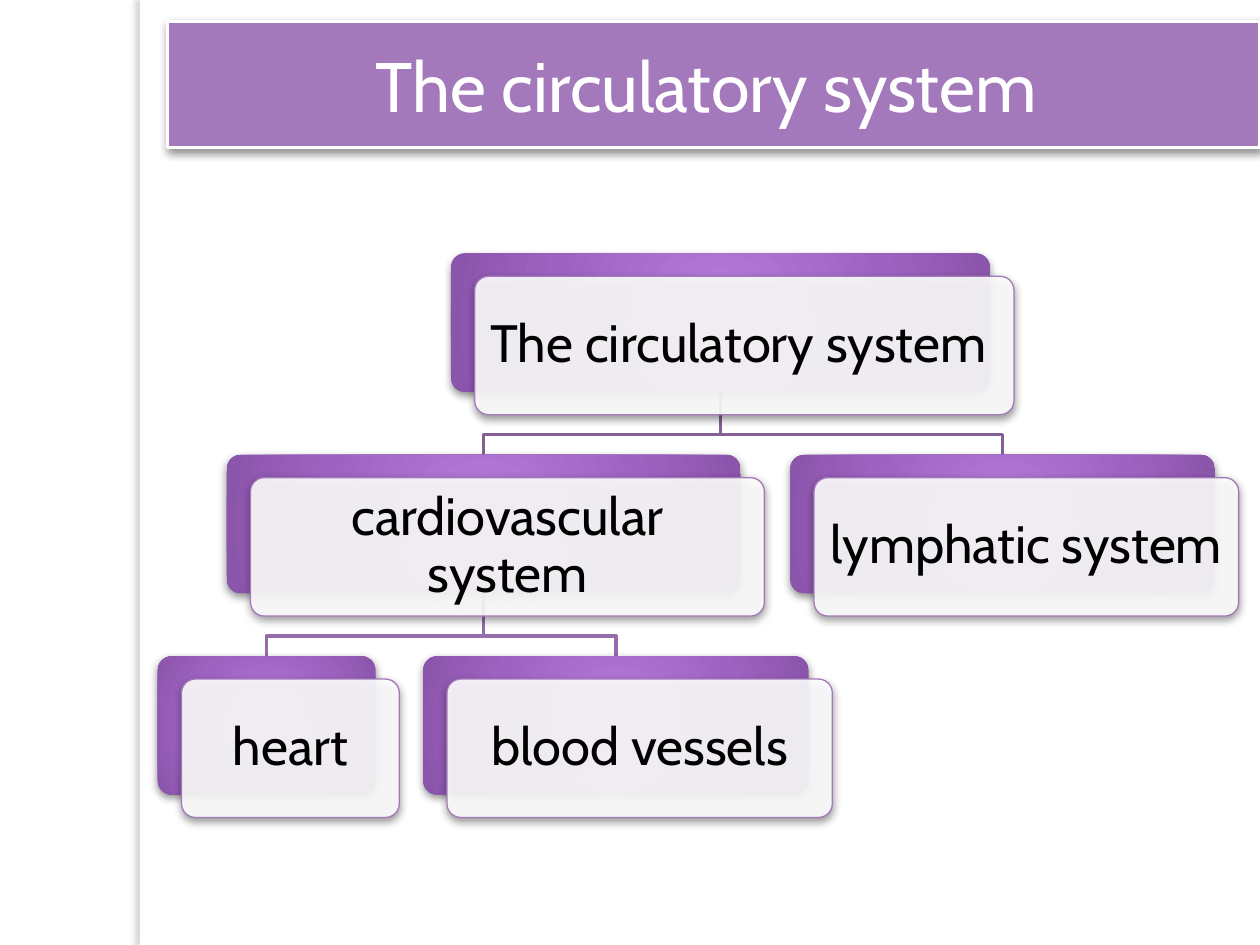
"""Build a slide with a hierarchy chart of the circulatory system."""
from dataclasses import dataclass

from pptx import Presentation
from pptx.dml.color import RGBColor as Color
from pptx.enum.shapes import MSO_SHAPE as Preset
from pptx.enum.text import MSO_ANCHOR as Anchor, MSO_AUTO_SIZE as AutoSize, PP_ALIGN as Align
from pptx.oxml import parse_xml
from pptx.oxml.ns import nsdecls
from pptx.util import Cm, Pt


@dataclass(frozen=True)
class Theme:
    font: str = "Cabin"
    title_size: int = 40
    node_size: int = 30
    white: str = "FFFFFF"
    text: str = "000000"
    accent: str = "A379BB"
    branches: tuple = ("836196", "946EAA")
    gradient: tuple = ((0, "B277D5"), (15, "B177D4"), (62, "9D63C0"), (97, "8C55AC"), (100, "8A50AB"))
    strip_shadow: tuple = ("646068", 25, 3, 3, 180)
    card_shadow: tuple = ("000000", 43, 5, 2, 90)


theme = Theme()


def paint(shape, fill, line, width, shadow):
    shape.fill.solid()
    shape.fill.fore_color.rgb = Color.from_string(fill)
    if line:
        shape.line.color.rgb = Color.from_string(line)
        shape.line.width = Pt(width)
    else:
        shape.line.fill.background()
    color, alpha, blur, distance, angle = shadow
    shape.element.spPr.append(parse_xml(
        f'<a:effectLst {nsdecls("a")}><a:outerShdw blurRad="{Pt(blur)}" dist="{Pt(distance)}" '
        f'dir="{angle * 60000}" algn="ctr" rotWithShape="0"><a:srgbClr val="{color}">'
        f'<a:alpha val="{alpha * 1000}"/></a:srgbClr></a:outerShdw></a:effectLst>'))


def write(shape, text, size, color, frame_format, paragraph_format):
    frame = shape.text_frame
    frame.text = text
    paragraph = frame.paragraphs[0]
    font_format = {"name": theme.font, "size": Pt(size), "bold": False}
    for target, values in ((frame, frame_format), (paragraph, paragraph_format),
                           (paragraph.runs[0].font, font_format)):
        for name, value in values.items():
            setattr(target, name, value)
    paragraph.runs[0].font.color.rgb = Color.from_string(color)


presentation = Presentation()
presentation.slide_width, presentation.slide_height = Cm(25.4), Cm(19.05)
slide = presentation.slides.add_slide(presentation.slide_layouts[5])
shapes = slide.shapes

strip = shapes.add_shape(Preset.RECTANGLE, Cm(2.82), 0, Cm(0.2), presentation.slide_height)
paint(strip, theme.white, None, 0, theme.strip_shadow)

title = shapes.title
title.left, title.top, title.width, title.height = Cm(3.38), Cm(0.43), Cm(22.02), Cm(2.54)
paint(title, theme.accent, theme.white, 2, theme.card_shadow)
frame_format = {"word_wrap": True, "auto_size": AutoSize.NONE, "vertical_anchor": Anchor.MIDDLE}
write(title, "The circulatory system ", theme.title_size, theme.white,
      frame_format, {"alignment": Align.CENTER})

nodes = {
    "The circulatory system ": (0, 9.09, 10.87, None),
    "cardiovascular system": (1, 4.57, 10.36, "The circulatory system "),
    "heart": (2, 3.18, 4.39, "cardiovascular system"),
    "blood vessels": (2, 8.53, 7.77, "cardiovascular system"),
    "lymphatic system": (1, 15.93, 8.56, "The circulatory system "),
}
first_top, row_pitch, node_height = 5.11, 4.06, 2.79
offset_x, offset_y, bend = 0.48, 0.46, 0.41

for level, left, width, parent in nodes.values():
    if parent is None:
        continue
    parent_level, parent_left, parent_width, _ = nodes[parent]
    start_x, end_x = parent_left + parent_width / 2, left + width / 2
    start_y = first_top + parent_level * row_pitch + node_height
    end_y = first_top + level * row_pitch
    builder = shapes.build_freeform(Cm(start_x), Cm(start_y))
    builder.add_line_segments([(Cm(x), Cm(y)) for x, y in (
        (start_x, end_y - bend), (end_x, end_y - bend), (end_x, end_y))], close=False)
    branch = builder.convert_to_shape()
    branch.fill.background()
    branch.line.color.rgb = Color.from_string(theme.branches[parent_level])
    branch.line.width = Pt(2)
    branch.shadow.inherit = False

stops = "".join(f'<a:gs pos="{position * 1000}"><a:srgbClr val="{color}"/></a:gs>'
                for position, color in theme.gradient)
card_format = frame_format | {f"margin_{side}": Cm(0.23) for side in ("left", "top", "right", "bottom")}
card_paragraph = {"alignment": Align.CENTER, "line_spacing": 0.9}

for text, (level, left, width, _) in nodes.items():
    top = first_top + level * row_pitch
    back, card = (
        shapes.add_shape(Preset.ROUNDED_RECTANGLE, Cm(left + dx), Cm(top + dy), Cm(width), Cm(node_height))
        for dx, dy in ((0, 0), (offset_x, offset_y)))
    back.adjustments[0] = card.adjustments[0] = 0.1

    paint(back, theme.accent, None, 0, theme.card_shadow)
    properties = back.element.spPr
    properties.replace(properties.find("{*}solidFill"), parse_xml(
        f'<a:gradFill {nsdecls("a")} rotWithShape="1"><a:gsLst>{stops}</a:gsLst><a:path path="circle">'
        '<a:fillToRect l="50000" t="50000" r="50000" b="50000"/></a:path></a:gradFill>'))

    paint(card, theme.white, theme.accent, 0.75, theme.card_shadow)
    card.element.spPr.find("{*}solidFill")[0].append(parse_xml(f'<a:alpha {nsdecls("a")} val="90000"/>'))
    write(card, text, theme.node_size, theme.text, card_format, card_paragraph)

presentation.save("out.pptx")
